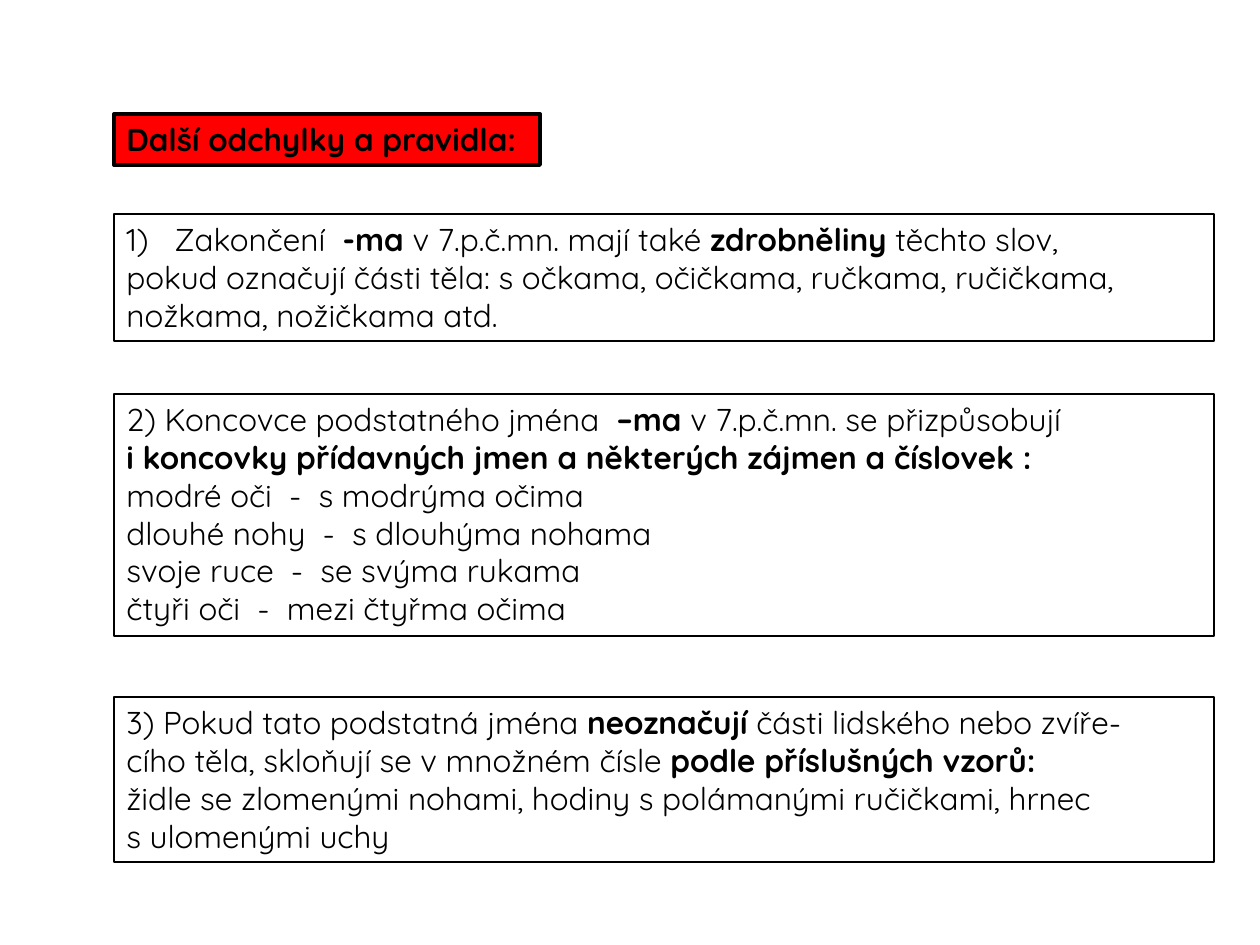
from lxml.etree import SubElement
from pptx import Presentation
from pptx.dml.color import RGBColor
from pptx.enum.text import MSO_ANCHOR, MSO_AUTO_SIZE as AutoSize
from pptx.oxml.ns import qn
from pptx.util import Pt

# Content: each box is a list of lines, each line a list of (text, bold)
HEADING = [[("Další odchylky a pravidla:", True)]]
ENDING_RULE = [
    [("Zakončení  ", False), ("-ma ", True), ("v 7.p.č.mn. mají také ", False),
     ("zdrobněliny", True), (" těchto slov,", False)],
    [("pokud označují části těla: s očkama, očičkama, ručkama, ručičkama,", False)],
    [("nožkama, nožičkama atd.", False)],
]
AGREEMENT_RULE = [
    [("2) Koncovce podstatného jména  ", False), ("–ma ", True),
     ("v 7.p.č.mn. se přizpůsobují", False)],
    [("i koncovky přídavných jmen a některých zájmen a číslovek :", True)],
    [("modré oči  -  s modrýma očima", False)],
    [("dlouhé nohy  -  s dlouhýma nohama", False)],
    [("svoje ruce  -  se svýma rukama", False)],
    [("čtyři oči  -  mezi čtyřma očima", False)],
]
EXCEPTION_RULE = [
    [("3) Pokud tato podstatná jména ", False), ("neoznačují", True),
     (" části lidského nebo zvíře-", False)],
    [("cího těla, skloňují se v množném čísle ", False),
     ("podle příslušných vzorů:", True)],
    [("židle se zlomenými nohami, hodiny s polámanými ručičkami, hrnec", False)],
    [("s ulomenými uchy", False)],
]

COLORS = {"ink": "000000", "heading": "FF0000"}
FONT, TEXT_PT = "Quicksand", 18
LEFT, RULE_WIDTH = 114, 1100
# lines, top, width, height, fill, border in points
BOXES = [
    (HEADING, 114, 426, 51, "heading", 2.25),
    (ENDING_RULE, 214, RULE_WIDTH, 127, None, 1.5),
    (AGREEMENT_RULE, 394, RULE_WIDTH, 242, None, 1.5),
    (EXCEPTION_RULE, 697, RULE_WIDTH, 165, None, 1.5),
]


def px(length):
    return int(length * 914400 / 126)


def color(name):
    return RGBColor.from_string(COLORS[name])


def add_box(slide, lines, top, width, height, fill, border):
    box = slide.shapes.add_textbox(px(LEFT), px(top), px(width), px(height))
    box.line.color.rgb = color("ink")
    box.line.width = Pt(border)
    if fill:
        box.fill.solid()
        box.fill.fore_color.rgb = color(fill)
    frame = box.text_frame
    frame.word_wrap = True
    frame.auto_size = AutoSize.SHAPE_TO_FIT_TEXT
    frame.vertical_anchor = MSO_ANCHOR.TOP
    for index, line in enumerate(lines):
        paragraph = frame.paragraphs[0] if index == 0 else frame.add_paragraph()
        for text, bold in line:
            run = paragraph.add_run()
            run.text = text
            run.font.name, run.font.size, run.font.bold = FONT, Pt(TEXT_PT), bold
            run.font.color.rgb = color("ink")
    return frame


def number_paragraph(paragraph, indent):
    props = paragraph._p.get_or_add_pPr()
    props.set("marL", str(px(indent)))
    props.set("indent", str(-px(indent)))
    SubElement(props, qn("a:buFont"), typeface=FONT)
    SubElement(props, qn("a:buAutoNum"), type="arabicParenR")


def main():
    deck = Presentation()
    deck.slide_width, deck.slide_height = px(1260), px(945)
    slide = deck.slides.add_slide(deck.slide_layouts[6])
    frames = [add_box(slide, *box) for box in BOXES]
    # The first rule carries an automatic number
    number_paragraph(frames[1].paragraphs[0], 48)
    deck.save("out.pptx")


if __name__ == "__main__":
    main()
